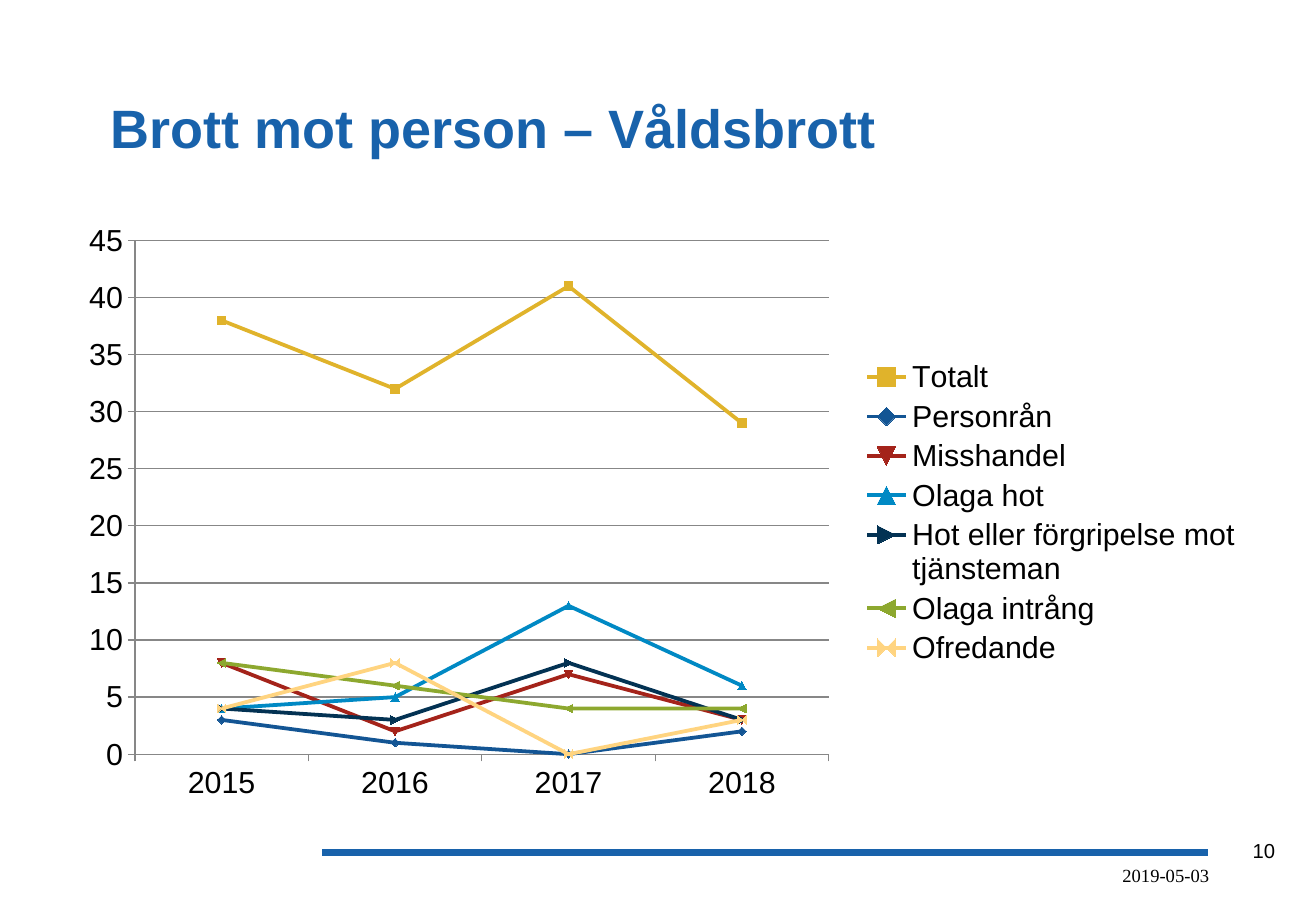
from dataclasses import dataclass

from lxml import etree
from pptx import Presentation
from pptx.chart.chart import Chart
from pptx.chart.data import CategoryChartData
from pptx.dml.color import RGBColor
from pptx.enum.chart import XL_CHART_TYPE, XL_LEGEND_POSITION, XL_TICK_MARK
from pptx.enum.shapes import MSO_CONNECTOR
from pptx.enum.text import MSO_ANCHOR, PP_ALIGN
from pptx.oxml import parse_xml
from pptx.oxml.ns import nsdecls, qn
from pptx.slide import Slide
from pptx.util import Inches, Pt

LINE_CHART = XL_CHART_TYPE.LINE_MARKERS
LEGEND_RIGHT = XL_LEGEND_POSITION.RIGHT
TICK_OUTSIDE = XL_TICK_MARK.OUTSIDE
STRAIGHT = MSO_CONNECTOR.STRAIGHT
TOP, MIDDLE = MSO_ANCHOR.TOP, MSO_ANCHOR.MIDDLE
LEFT, RIGHT = PP_ALIGN.LEFT, PP_ALIGN.RIGHT


@dataclass(frozen=True)
class Theme:
    sans: str = "Arial"
    serif: str = "Times New Roman"
    blue: str = "1862AB"
    black: str = "000000"
    axis: str = "878787"
    title_size: float = 32
    chart_size: float = 18
    number_size: float = 12
    date_size: float = 11
    rule_width: float = 4.5
    series_width: float = 2.25
    axis_width: float = 0.75
    marker_size: int = 5


@dataclass(frozen=True)
class Box:
    left: float
    top: float
    width: float
    height: float


@dataclass(frozen=True)
class Label:
    text: str
    box: Box
    font: str
    size: float
    color: str
    bold: bool = False
    align: PP_ALIGN = LEFT
    anchor: MSO_ANCHOR = TOP
    left_inset: float = 0.1
    right_inset: float = 0.1


@dataclass(frozen=True)
class Crime:
    name: str
    counts: tuple[int, ...]
    color: str


THEME = Theme()
YEARS = ("2015", "2016", "2017", "2018")
CRIMES = (
    Crime("Totalt", (38, 32, 41, 29), "E0B32B"),
    Crime("Personrån", (3, 1, 0, 2), "135594"),
    Crime("Misshandel", (8, 2, 7, 3), "A4231A"),
    Crime("Olaga hot", (4, 5, 13, 6), "0089C4"),
    Crime("Hot eller förgripelse mot tjänsteman", (4, 3, 8, 3), "033253"),
    Crime("Olaga intrång", (8, 6, 4, 4), "8DA82F"),
    Crime("Ofredande", (4, 8, 0, 3), "FFD480"),
)
CHART_BOX = Box(0.54, 1.75, 9.75, 4.95)
PLOT_BOX = Box(1.11, 1.98, 5.71, 4.23)
LEGEND_BOX = Box(7.05, 2.92, 3.2, 2.6)
LABELS = (
    Label("10", Box(10.21, 6.85, 0.44, 0.3), THEME.sans, THEME.number_size, THEME.black),
    Label("2019-05-03", Box(3.38, 7.06, 6.67, 0.29), THEME.serif, THEME.date_size,
          THEME.black, align=RIGHT, left_inset=0),
    Label("Brott mot person – Våldsbrott", Box(0.83, 0.42, 9.11, 1.25), THEME.sans,
          THEME.title_size, THEME.blue, bold=True, anchor=MIDDLE,
          left_inset=0.08, right_inset=0.08),
)


def rgb(color: str) -> RGBColor:
    return RGBColor.from_string(color)


def inches(box: Box) -> tuple[int, int, int, int]:
    return Inches(box.left), Inches(box.top), Inches(box.width), Inches(box.height)


def add_label(slide: Slide, label: Label) -> None:
    frame = slide.shapes.add_textbox(*inches(label.box)).text_frame
    frame.word_wrap = True
    frame.vertical_anchor = label.anchor
    frame.margin_left = Inches(label.left_inset)
    frame.margin_right = Inches(label.right_inset)
    frame.text = label.text
    paragraph = frame.paragraphs[0]
    paragraph.alignment = label.align
    font = paragraph.runs[0].font
    font.name, font.size, font.bold = label.font, Pt(label.size), label.bold
    font.color.rgb = rgb(label.color)


def add_footer_rule(slide: Slide) -> None:
    rule = slide.shapes.add_connector(
        STRAIGHT, Inches(2.65), Inches(7.02), Inches(9.94), Inches(7.02))
    rule.line.color.rgb = rgb(THEME.blue)
    rule.line.width = Pt(THEME.rule_width)
    etree.SubElement(rule._element.spPr, qn("a:effectLst"))


def chart_layout(box: Box, inner: bool = False):
    """Build a manual layout as fractions of the chart frame."""
    target = '<c:layoutTarget val="inner"/>' if inner else ""
    fractions = {
        "x": (box.left - CHART_BOX.left) / CHART_BOX.width,
        "y": (box.top - CHART_BOX.top) / CHART_BOX.height,
        "w": box.width / CHART_BOX.width,
        "h": box.height / CHART_BOX.height,
    }
    modes = '<c:xMode val="edge"/><c:yMode val="edge"/>'
    values = "".join(f'<c:{key} val="{value:.4f}"/>' for key, value in fractions.items())
    return parse_xml(f'<c:layout {nsdecls("c")}><c:manualLayout>{target}{modes}{values}'
                     "</c:manualLayout></c:layout>")


def place_plot_and_legend(chart: Chart) -> None:
    plot_area = chart._chartSpace.chart.plotArea
    for layout in plot_area.findall(qn("c:layout")):
        plot_area.remove(layout)
    plot_area.insert(0, chart_layout(PLOT_BOX, inner=True))
    legend = chart.legend._element
    for layout in legend.findall(qn("c:layout")):
        legend.remove(layout)
    legend.find(qn("c:legendPos")).addnext(chart_layout(LEGEND_BOX))


def style_axes(chart: Chart) -> None:
    values, years = chart.value_axis, chart.category_axis
    values.minimum_scale, values.maximum_scale, values.major_unit = 0, 45, 5
    values.has_major_gridlines = True
    for axis in (values, years):
        axis.major_tick_mark = TICK_OUTSIDE
    for line in (values.format.line, years.format.line, values.major_gridlines.format.line):
        line.color.rgb = rgb(THEME.axis)
        line.width = Pt(THEME.axis_width)


def add_crime_chart(slide: Slide) -> None:
    data = CategoryChartData()
    data.categories = YEARS
    for crime in CRIMES:
        data.add_series(crime.name, crime.counts)
    chart = slide.shapes.add_chart(LINE_CHART, *inches(CHART_BOX), data).chart
    chart.has_title = False
    chart.font.name, chart.font.size = THEME.sans, Pt(THEME.chart_size)
    chart.font.color.rgb = rgb(THEME.black)
    chart.has_legend = True
    chart.legend.position = LEGEND_RIGHT
    chart.legend.include_in_layout = False
    plot = chart.plots[0]
    plot.vary_by_categories = False
    for series, crime in zip(plot.series, CRIMES):
        series.smooth = False
        series.format.line.width = Pt(THEME.series_width)
        series.marker.size = THEME.marker_size
        series.marker.format.fill.solid()
        for color in (series.format.line.color, series.marker.format.fill.fore_color,
                      series.marker.format.line.color):
            color.rgb = rgb(crime.color)
    style_axes(chart)
    place_plot_and_legend(chart)


def main() -> None:
    deck = Presentation()
    deck.slide_width, deck.slide_height = Inches(10.83), Inches(7.5)
    slide = deck.slides.add_slide(deck.slide_layouts[6])
    add_footer_rule(slide)
    for label in LABELS:
        add_label(slide, label)
    add_crime_chart(slide)
    deck.save("out.pptx")


if __name__ == "__main__":
    main()
